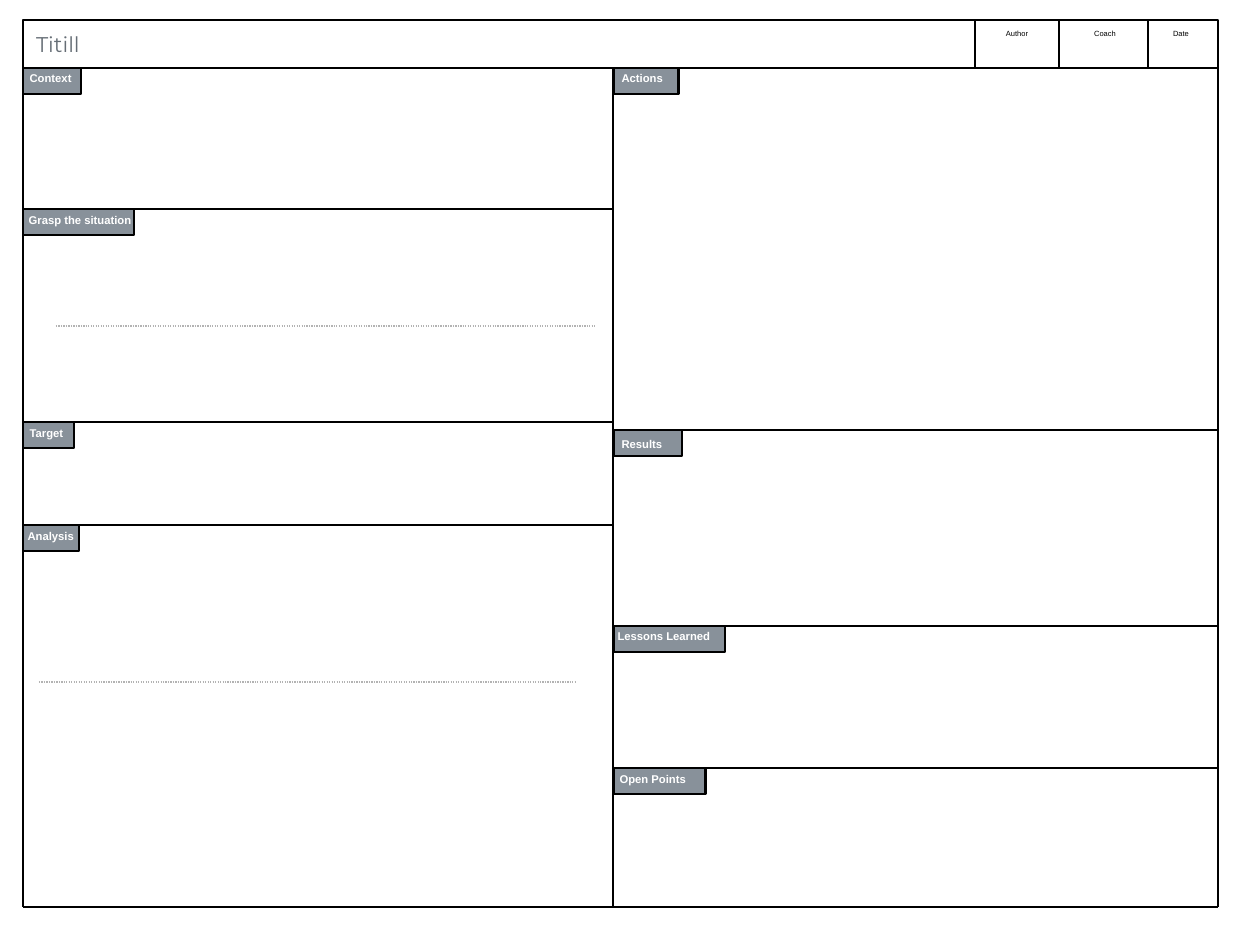
from dataclasses import dataclass

import pptx
import pptx.dml.color
import pptx.enum.dml
import pptx.enum.shapes
import pptx.enum.text
import pptx.oxml.ns
import pptx.util

PX = 914400 // 90
COLORS = {"ink": "000000", "tag": "88919A", "label": "FFFFFF", "title": "656D75", "guide": "B3B3B3"}
LEFT, MIDDLE, RIGHT = 23, 613, 1218
TOP, BODY, BOTTOM = 20, 68, 907
TAG_H = 26
FIELD_W = 36
RULE_PT = 2.25


@dataclass
class Section:
    label: str
    x: int
    right: int
    y: int
    tag_w: int
    text_x: int
    text_y: int
    text_w: int


@dataclass
class Field:
    label: str
    center: int


SECTIONS = [
    Section("Context", LEFT, MIDDLE, BODY, 58, 26, 69, 50),
    Section("Grasp the situation", LEFT, MIDDLE, 209, 111, 25, 211, 112),
    Section("Target", LEFT, MIDDLE, 422, 51, 26, 424, 43),
    Section("Analysis", LEFT, MIDDLE, 525, 56, 24, 527, 55),
    Section("Actions", MIDDLE + 1, RIGHT, BODY, 65, 618, 69, 50),
    Section("Results", MIDDLE + 1, RIGHT, 430, 68, 618, 435, 50),
    Section("Lessons Learned", MIDDLE + 1, RIGHT, 626, 111, 614, 627, 102),
    Section("Open Points", MIDDLE + 1, RIGHT, 768, 92, 616, 770, 75),
]
FIELDS = [Field("Author", 1017), Field("Coach", 1105), Field("Date", 1181)]


def rgb(name: str) -> pptx.dml.color.RGBColor:
    return pptx.dml.color.RGBColor.from_string(COLORS[name])


def px(*values: int) -> list[int]:
    return [v * PX for v in values]


def add_line(s, x1: int, y1: int, x2: int, y2: int, color: str = "ink", width: float = RULE_PT):
    c = s.shapes.add_connector(pptx.enum.shapes.MSO_CONNECTOR.STRAIGHT, *px(x1, y1, x2, y2))
    c.line.color.rgb = rgb(color)
    c.line.width = pptx.util.Pt(width)
    sp_pr = c._element.spPr
    sp_pr.append(sp_pr.makeelement(pptx.oxml.ns.qn("a:effectLst"), {}))
    return c


def add_guide(s, x1: int, x2: int, y: int) -> None:
    c = add_line(s, x1, y, x2, y, "guide", 1)
    c.line.dash_style = pptx.enum.dml.MSO_LINE.ROUND_DOT


def add_box(s, x: int, y: int, w: int, h: int, fill: str | None = None) -> None:
    sp = s.shapes.add_shape(pptx.enum.shapes.MSO_SHAPE.RECTANGLE, *px(x, y, w, h))
    sp.shadow.inherit = False
    if fill:
        sp.fill.solid()
        sp.fill.fore_color.rgb = rgb(fill)
    else:
        sp.fill.background()
    sp.line.color.rgb = rgb("ink")
    sp.line.width = pptx.util.Pt(RULE_PT)


def set_insets(tf, inset: float) -> None:
    tf.margin_left = tf.margin_top = tf.margin_right = tf.margin_bottom = pptx.util.Inches(inset)


def add_run(p, text: str, font: str, size: int, color: str, bold: bool = False) -> None:
    r = p.add_run()
    r.text = text
    r.font.name = font
    r.font.size = pptx.util.Pt(size)
    r.font.bold = bold
    r.font.color.rgb = rgb(color)


def add_text(s, x: int, y: int, w: int, h: int, inset: float):
    tf = s.shapes.add_textbox(*px(x, y, w, h)).text_frame
    tf.word_wrap = False
    tf.auto_size = pptx.enum.text.MSO_AUTO_SIZE.SHAPE_TO_FIT_TEXT
    set_insets(tf, inset)
    return tf


def add_section(s, section: Section) -> None:
    add_box(s, section.x, section.y, section.tag_w, TAG_H, "tag")
    if section.y > BODY:
        add_line(s, section.x, section.y, section.right, section.y)
    tf = add_text(s, section.text_x, section.text_y, section.text_w, 21, 0.04)
    p = tf.paragraphs[0]
    p.line_spacing = 0.9
    add_run(p, section.label, "Arial", 9, "label", True)


def add_field(s, field: Field) -> None:
    tf = add_text(s, field.center - FIELD_W // 2, 29, FIELD_W, 9, 0)
    tf.vertical_anchor = pptx.enum.text.MSO_ANCHOR.MIDDLE
    p = tf.paragraphs[0]
    p.alignment = pptx.enum.text.PP_ALIGN.CENTER
    add_run(p, field.label, "Arial", 6, "ink")


def add_title(s, text: str) -> None:
    sp = s.shapes.title
    sp.left, sp.top, sp.width, sp.height = px(36, 0, 447, 91)
    tf = sp.text_frame
    tf.word_wrap = True
    tf.auto_size = pptx.enum.text.MSO_AUTO_SIZE.NONE
    tf.vertical_anchor = pptx.enum.text.MSO_ANCHOR.MIDDLE
    set_insets(tf, 0)
    p = tf.paragraphs[0]
    p.alignment = pptx.enum.text.PP_ALIGN.LEFT
    p.line_spacing = 0.9
    add_run(p, text, "Montserrat", 17, "title")


def main() -> None:
    prs = pptx.Presentation()
    prs.slide_width, prs.slide_height = px(1260, 945)
    s = prs.slides.add_slide(prs.slide_layouts[5])
    add_title(s, "Titill")
    for section in SECTIONS:
        add_section(s, section)
    add_guide(s, 56, 595, 326)
    add_guide(s, 39, 575, 682)
    add_box(s, LEFT, TOP, RIGHT - LEFT, BODY - TOP)
    for x in (LEFT, MIDDLE, RIGHT):
        add_line(s, x, BODY, x, BOTTOM)
    add_line(s, LEFT, BOTTOM, RIGHT, BOTTOM)
    for x in (975, 1059, 1148):
        add_line(s, x, TOP, x, BODY)
    for field in FIELDS:
        add_field(s, field)
    prs.save("out.pptx")


if __name__ == "__main__":
    main()
